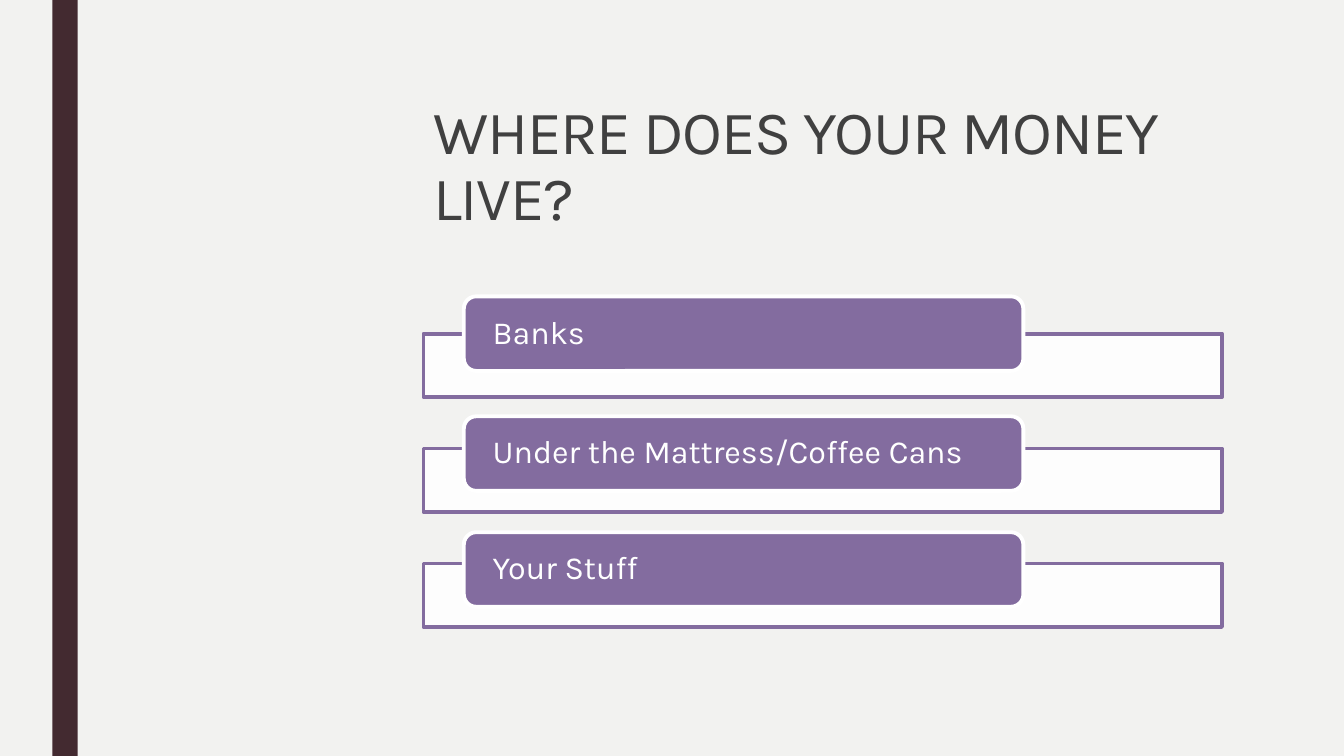
from lxml import etree
from pptx import Presentation
from pptx.dml.color import RGBColor
from pptx.enum.shapes import MSO_SHAPE
from pptx.enum.text import MSO_ANCHOR, PP_ALIGN
from pptx.oxml.ns import qn
from pptx.util import Inches, Pt

TITLE = "WHERE DOES YOUR MONEY LIVE?"
# Each place with the top of its label, in inches
PLACES = [
    ("Banks", 2.94),
    ("Under the Mattress/Coffee Cans", 4.13),
    ("Your Stuff", 5.28),
]

BACKGROUND = RGBColor(0xF2, 0xF2, 0xF0)
STRIPE = RGBColor(0x43, 0x2A, 0x30)
PURPLE = RGBColor(0x83, 0x6C, 0x9F)
WHITE = RGBColor(0xFF, 0xFF, 0xFF)
TITLE_GREY = RGBColor(0x40, 0x40, 0x40)

RECT, ROUNDED = MSO_SHAPE.RECTANGLE, MSO_SHAPE.ROUNDED_RECTANGLE
TOP, MIDDLE, LEFT = MSO_ANCHOR.TOP, MSO_ANCHOR.MIDDLE, PP_ALIGN.LEFT

CONTENT_LEFT = 4.2
BAR_TOP, BAR_STEP = 3.31, 1.14
BAR_SIZE = (7.92, 0.63)
LABEL_LEFT, LABEL_SIZE = 4.6, (5.55, 0.74)
LABEL_MARGIN = Inches(0.25)


def add_box(slide, preset, box, fill, line=None):
    shape = slide.shapes.add_shape(preset, *map(Inches, box))
    shape.shadow.inherit = False
    shape.fill.solid()
    shape.fill.fore_color.rgb = fill
    if line is None:
        shape.line.fill.background()
    else:
        shape.line.color.rgb = line
        shape.line.width = Pt(2.75)
    return shape


def set_alpha(shape, percent):
    color = shape.fill._xPr.find(qn("a:solidFill"))[0]
    etree.SubElement(color, qn("a:alpha"), val=str(percent * 1000))


def write(shape, words, frame_format, paragraph_format, font_format, color):
    frame = shape.text_frame
    frame.text = words
    paragraph = frame.paragraphs[0]
    font = paragraph.runs[0].font
    for target, values in (
        (frame, frame_format),
        (paragraph, paragraph_format),
        (font, font_format),
    ):
        for name, value in values.items():
            setattr(target, name, value)
    font.color.rgb = color


def add_title(slide):
    title = slide.shapes.title
    title.left, title.top = Inches(CONTENT_LEFT), Inches(0.96)
    title.width, title.height = Inches(8.11), Inches(1.66)
    write(
        title, TITLE,
        {"vertical_anchor": TOP, "word_wrap": True},
        {"alignment": LEFT, "line_spacing": 0.89},
        {"name": "Karla", "size": Pt(44)},
        TITLE_GREY,
    )
    title.text_frame.paragraphs[0].runs[0].font._element.set("spc", "-100")


def add_place(slide, index, place, label_top):
    bar_top = BAR_TOP + index * BAR_STEP
    bar = add_box(slide, RECT, (CONTENT_LEFT, bar_top, *BAR_SIZE), WHITE, PURPLE)
    set_alpha(bar, 90)
    label = add_box(slide, ROUNDED, (LABEL_LEFT, label_top, *LABEL_SIZE), PURPLE, WHITE)
    write(
        label, place,
        {"vertical_anchor": MIDDLE, "word_wrap": True,
         "margin_left": LABEL_MARGIN, "margin_right": LABEL_MARGIN,
         "margin_top": 0, "margin_bottom": 0},
        {"alignment": LEFT, "line_spacing": 0.9},
        {"name": "Karla", "size": Pt(23)},
        WHITE,
    )


def main():
    deck = Presentation()
    deck.slide_width, deck.slide_height = Inches(13.33), Inches(7.5)
    slide = deck.slides.add_slide(deck.slide_layouts[5])
    slide.background.fill.solid()
    slide.background.fill.fore_color.rgb = BACKGROUND

    add_box(slide, RECT, (0.52, 0, 0.25, 7.5), STRIPE)
    add_title(slide)
    for index, (place, label_top) in enumerate(PLACES):
        add_place(slide, index, place, label_top)
    deck.save("out.pptx")


if __name__ == "__main__":
    main()
